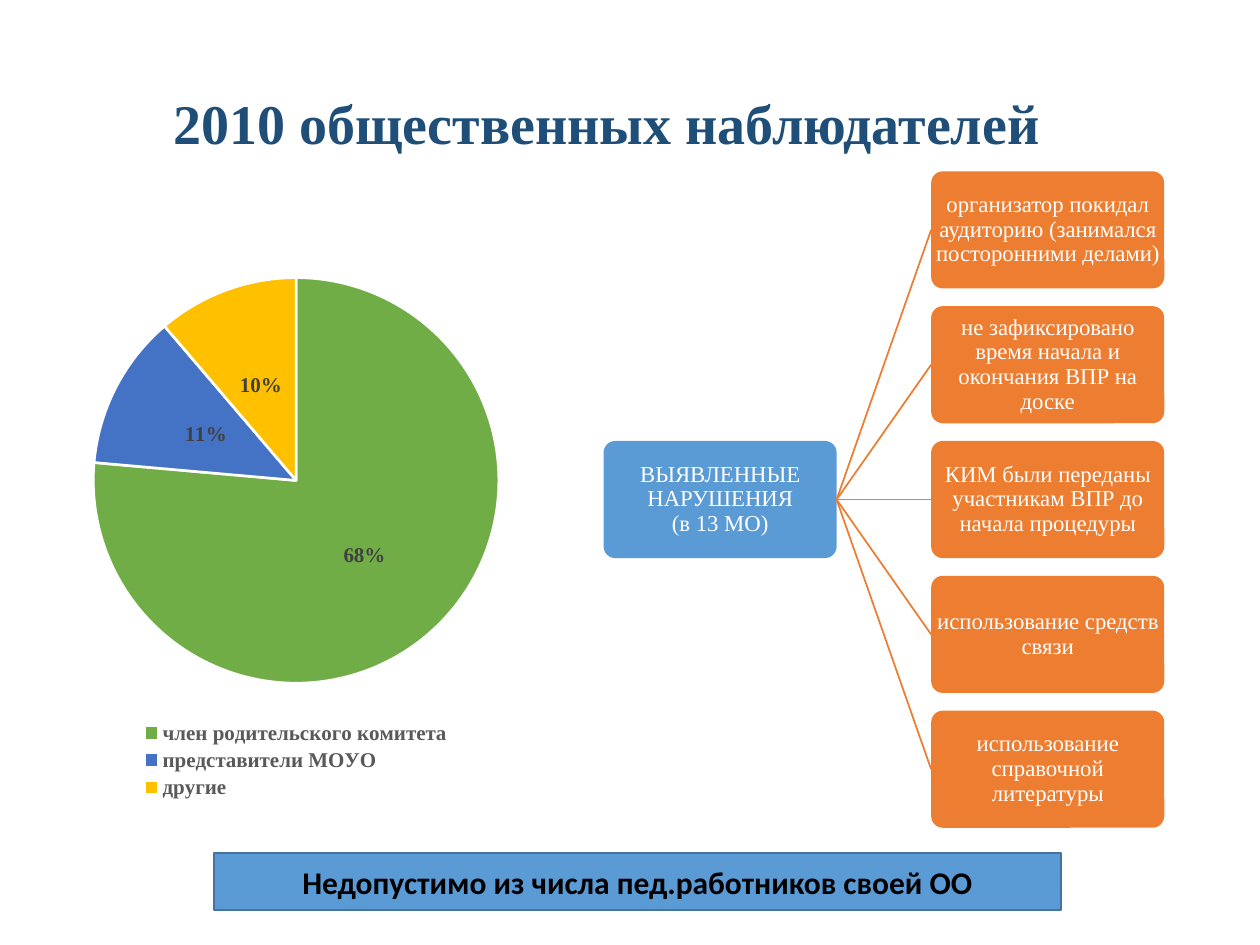
from dataclasses import dataclass

from lxml import etree
from pptx import Presentation
from pptx.chart.data import CategoryChartData
from pptx.dml.color import RGBColor
from pptx.enum.chart import XL_CHART_TYPE, XL_LABEL_POSITION, XL_LEGEND_POSITION
from pptx.enum.shapes import MSO_CONNECTOR, MSO_SHAPE
from pptx.enum.text import MSO_ANCHOR, PP_ALIGN
from pptx.oxml import parse_xml
from pptx.oxml.ns import nsdecls, qn
from pptx.util import Inches, Pt

PIE = XL_CHART_TYPE.PIE
BOTTOM = XL_LEGEND_POSITION.BOTTOM
MID = XL_LABEL_POSITION.CENTER
LINE = MSO_CONNECTOR.STRAIGHT
RECT, ROUND = MSO_SHAPE.RECTANGLE, MSO_SHAPE.ROUNDED_RECTANGLE
TOP, MIDDLE = MSO_ANCHOR.TOP, MSO_ANCHOR.MIDDLE
CENTER = PP_ALIGN.CENTER


@dataclass(frozen=True)
class Theme:
    serif: str = "Times New Roman"
    sans: str = "Calibri"
    navy: str = "1F4E79"
    blue: str = "5B9BD5"
    edge: str = "43739E"
    orange: str = "ED7D31"
    white: str = "FFFFFF"
    black: str = "000000"
    legend: str = "595959"
    label: str = "404040"
    slices: tuple = ("70AD47", "4472C4", "FFC000")
    title: int = 32
    note: int = 18
    node: int = 13
    chart: int = 12


THEME = Theme()
SHARES = {
    "член родительского комитета": 0.68,
    "представители МОУО": 0.11,
    "другие": 0.1,
}
FAULTS = (
    "организатор покидал аудиторию (занимался посторонними делами)",
    "не зафиксировано время начала и окончания ВПР на доске",
    "КИМ были переданы участникам ВПР до начала процедуры",
    "использование средств связи",
    "использование справочной литературы",
)
NODE_W, NODE_H, STEP = 1.85, 0.93, 1.07
ROOT_X, LEAF_X, LEAF_Y = 4.79, 7.39, 1.36


def rgb(code):
    return RGBColor.from_string(code)


def style(font, size, color, face=THEME.serif, bold=False):
    font.name, font.size, font.bold = face, Pt(size), bold
    font.color.rgb = rgb(color)


def write(shape, *parts, size, color, face=THEME.serif, bold=False,
          anchor=MIDDLE, inset=None, space=1.0):
    """Fill a shape with one centred paragraph; a (text, points) part is spaced out."""
    frame = shape.text_frame
    frame.word_wrap, frame.vertical_anchor = True, anchor
    if inset is not None:
        frame.margin_left = frame.margin_right = Inches(inset)
        frame.margin_top = frame.margin_bottom = Inches(inset)
    para = frame.paragraphs[0]
    para.alignment, para.line_spacing = CENTER, space
    for part in parts:
        text, gap = part if isinstance(part, tuple) else (part, 0)
        run = para.add_run()
        run.text = text
        style(run.font, size, color, face, bold)
        if gap:
            run.font._element.set("spc", str(gap * 100))


def add_box(slide, kind, left, top, width, height, fill, edge=None):
    box = slide.shapes.add_shape(
        kind, Inches(left), Inches(top), Inches(width), Inches(height))
    box.shadow.inherit = False
    box.fill.solid()
    box.fill.fore_color.rgb = rgb(fill)
    if edge:
        box.line.color.rgb, box.line.width = rgb(edge), Pt(1)
    else:
        box.line.fill.background()
    return box


def add_node(slide, left, top, fill, *parts):
    node = add_box(slide, ROUND, left, top, NODE_W, NODE_H, fill)
    node.adjustments[0] = 0.1
    write(node, *parts, size=THEME.node, color=THEME.white, inset=0.01, space=0.9)


def add_link(slide, x1, y1, x2, y2):
    link = slide.shapes.add_connector(
        LINE, Inches(x1), Inches(y1), Inches(x2), Inches(y2))
    link.line.color.rgb, link.line.width = rgb(THEME.orange), Pt(1)
    etree.SubElement(link._element.spPr, qn("a:effectLst"))


def add_tree(slide):
    root_y = LEAF_Y + STEP * (len(FAULTS) // 2)
    add_node(slide, ROOT_X, root_y, THEME.blue,
             "ВЫЯВЛЕННЫЕ НАРУШЕНИЯ", (" ", 32), "(в 13 МО)")
    for i, fault in enumerate(FAULTS):
        top = LEAF_Y + STEP * i
        add_link(slide, ROOT_X + NODE_W, root_y + NODE_H / 2,
                 LEAF_X, top + NODE_H / 2)
        add_node(slide, LEAF_X, top, THEME.orange, fault)


def set_plot(chart, **area):
    """Fix the inner plot area, as fractions of the chart."""
    plot = chart._chartSpace.chart.plotArea
    for old in plot.findall(qn("c:layout")):
        plot.remove(old)
    sides = "".join(f'<c:{key} val="{val}"/>' for key, val in area.items())
    plot.insert(0, parse_xml(
        f'<c:layout {nsdecls("c")}><c:manualLayout>'
        '<c:layoutTarget val="inner"/><c:xMode val="edge"/><c:yMode val="edge"/>'
        f'{sides}</c:manualLayout></c:layout>'))


def add_pie(slide):
    data = CategoryChartData(number_format="0%")
    data.categories = list(SHARES)
    data.add_series("Наблюдатели", list(SHARES.values()))
    chart = slide.shapes.add_chart(
        PIE, Inches(0.59), Inches(2.03), Inches(3.52), Inches(4.35), data).chart
    style(chart.font, THEME.chart, THEME.black, bold=True)
    chart.has_title = False
    chart.has_legend = True
    chart.legend.position = BOTTOM
    chart.legend.include_in_layout = False
    style(chart.legend.font, THEME.chart, THEME.legend, bold=True)
    set_plot(chart, x=0.04, y=0.04, w=0.92, h=0.74)

    plot = chart.plots[0]
    plot.vary_by_categories = True
    plot.has_data_labels = True
    labels = plot.data_labels
    labels.show_value, labels.show_percentage = True, False
    labels.number_format, labels.number_format_is_linked = "0%", False
    labels.position = MID
    style(labels.font, THEME.chart, THEME.label, bold=True)
    for i, color in enumerate(THEME.slices):
        form = plot.series[0].points[i].format
        form.fill.solid()
        form.fill.fore_color.rgb = rgb(color)
        form.line.color.rgb, form.line.width = rgb(THEME.white), Pt(1.5)


def main():
    deck = Presentation()
    deck.slide_width, deck.slide_height = Inches(10), Inches(7.5)
    slide = deck.slides.add_slide(deck.slide_layouts[6])

    title = slide.shapes.add_textbox(
        Inches(0.31), Inches(0.71), Inches(9.01), Inches(6.05))
    write(title, "2010 общественных наблюдателей", size=THEME.title,
          color=THEME.navy, bold=True, anchor=TOP, space=0.9)
    add_pie(slide)
    add_tree(slide)
    note = add_box(slide, RECT, 1.7, 6.77, 6.72, 0.45, THEME.blue, THEME.edge)
    write(note, "Недопустимо из числа пед.работников своей ОО", size=THEME.note,
          color=THEME.black, face=THEME.sans, bold=True)
    deck.save("out.pptx")


if __name__ == "__main__":
    main()
